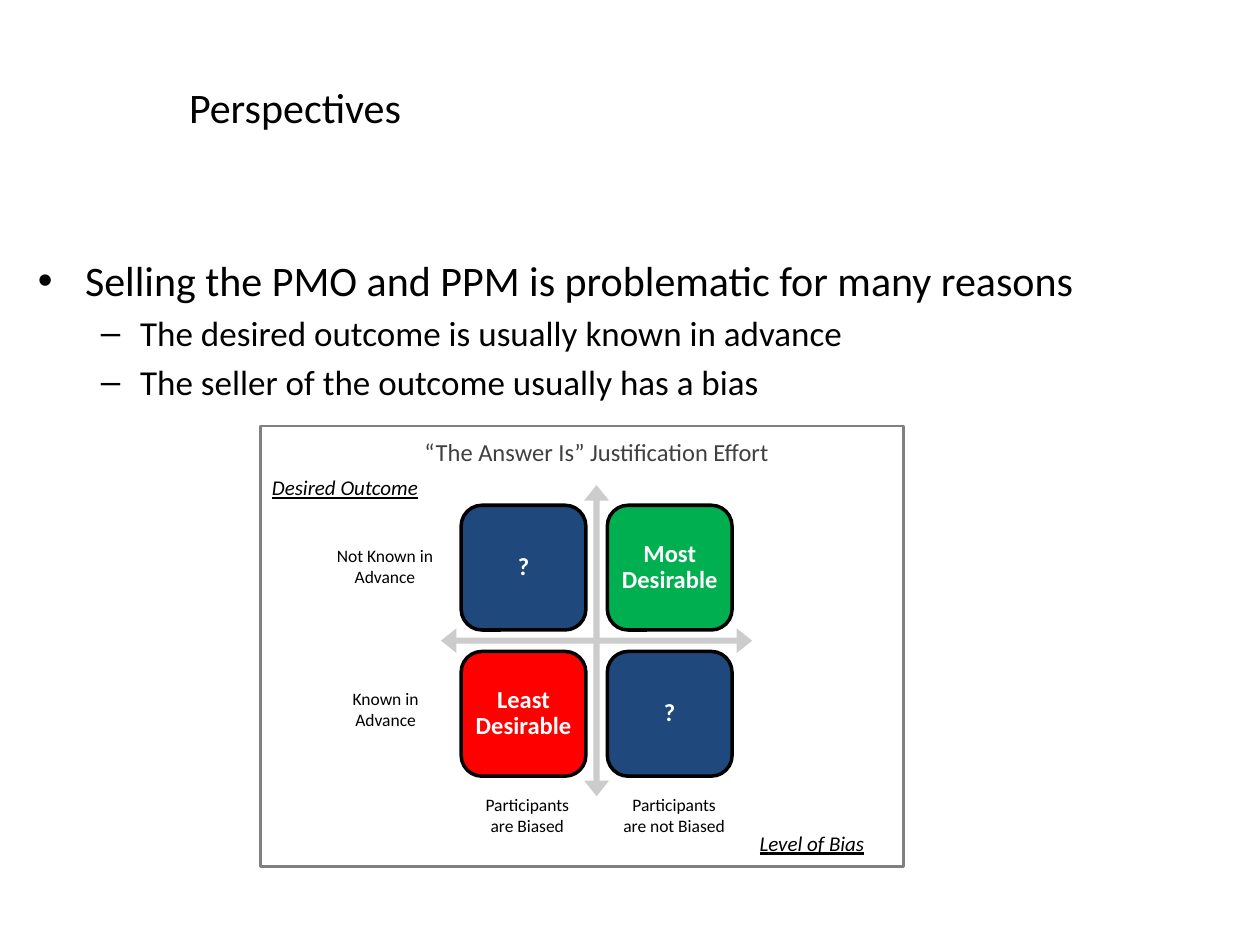
import pptx
import pptx.util
import pptx.dml.color
import pptx.enum.shapes
import pptx.enum.text

Inches = pptx.util.Inches
Pt = pptx.util.Pt
RGBColor = pptx.dml.color.RGBColor
Kind = pptx.enum.shapes.MSO_SHAPE
Align = pptx.enum.text.PP_ALIGN
Anchor = pptx.enum.text.MSO_ANCHOR
Fit = pptx.enum.text.MSO_AUTO_SIZE

BLACK = RGBColor(0x00, 0x00, 0x00)
WHITE = RGBColor(0xFF, 0xFF, 0xFF)
DARK = RGBColor(0x40, 0x40, 0x40)
GRAY = RGBColor(0x80, 0x80, 0x80)
LIGHT = RGBColor(0xCC, 0xCC, 0xCC)
BLUE = RGBColor(0x1F, 0x49, 0x7D)
GREEN = RGBColor(0x00, 0xB0, 0x50)
RED = RGBColor(0xFF, 0x00, 0x00)


def write(frame, text, size=10, color=BLACK, align=None, bold=None,
          slant=None, space=None):
    for i, line in enumerate(text.split("\n")):
        para = frame.paragraphs[0] if i == 0 else frame.add_paragraph()
        para.alignment = align
        para.line_spacing = space
        run = para.add_run()
        run.text = line
        font = run.font
        font.name = "Calibri"
        font.size = Pt(size)
        font.color.rgb = color
        font.bold = bold
        font.italic = slant
        font.underline = slant


def place(shape, box):
    shape.left, shape.top, shape.width, shape.height = map(Inches, box)


def label(slide, box, text, **style):
    frame = slide.shapes.add_textbox(*map(Inches, box)).text_frame
    frame.word_wrap = False
    frame.auto_size = Fit.SHAPE_TO_FIT_TEXT
    write(frame, text, **style)


def figure(slide, kind, box, fill=None, line=None, width=1):
    shape = slide.shapes.add_shape(kind, *map(Inches, box))
    shape.shadow.inherit = False
    if fill is None:
        shape.fill.background()
    else:
        shape.fill.solid()
        shape.fill.fore_color.rgb = fill
    if line is None:
        shape.line.fill.background()
    else:
        shape.line.color.rgb = line
        shape.line.width = Pt(width)
    return shape


def tile(slide, col, row, text, fill):
    box = (3.66 + 1.16 * col, 4.01 + 1.16 * row, 0.99, 0.99)
    shape = figure(slide, Kind.ROUNDED_RECTANGLE, box, fill, BLACK, 2)
    frame = shape.text_frame
    frame.word_wrap = True
    frame.vertical_anchor = Anchor.MIDDLE
    frame.margin_left = frame.margin_right = Inches(0.06)
    frame.margin_top = frame.margin_bottom = Inches(0.06)
    write(frame, text, size=14, color=WHITE, align=Align.CENTER, bold=True,
          space=0.9)


def head(slide):
    title = slide.shapes.title
    place(title, (1.4, 0.4, 8.26, 0.9))
    title.text_frame.vertical_anchor = Anchor.MIDDLE
    write(title.text_frame, "Perspectives", size=24, align=Align.LEFT)


def points(slide):
    body = slide.placeholders[1]
    place(body, (0.2, 1.97, 9.8, 4.49))
    items = [
        (0, 24, "Selling the PMO and PPM is problematic for many reasons"),
        (1, 20, "The desired outcome is usually known in advance"),
        (1, 20, "The seller of the outcome usually has a bias"),
    ]
    frame = body.text_frame
    write(frame, "\n".join(text for _, _, text in items))
    for para, (level, size, _) in zip(frame.paragraphs, items):
        para.level = level
        para.runs[0].font.size = Pt(size)


def matrix(slide):
    figure(slide, Kind.RECTANGLE, (2.07, 3.38, 5.1, 3.5), None, GRAY, 1.5)
    label(slide, (3.15, 3.42, 3.17, 0.34),
          "“The Answer Is” Justification Effort",
          size=14, color=DARK, align=Align.CENTER)
    cross = figure(slide, Kind.QUAD_ARROW, (3.5, 3.85, 2.47, 2.47), LIGHT)
    for i, value in enumerate((0.02, 0.04, 0.05)):
        cross.adjustments[i] = value

    tiles = [("?", BLUE), ("Most Desirable", GREEN),
             ("Least Desirable", RED), ("?", BLUE)]
    for i, (text, fill) in enumerate(tiles):
        tile(slide, i % 2, i // 2, text, fill)

    for box, text in [
        ((2.06, 3.72, 1.51, 0.3), "Desired Outcome"),
        ((5.93, 6.54, 1.16, 0.3), "Level of Bias"),
    ]:
        label(slide, box, text, size=12, slant=True)

    for box, text in [
        ((2.54, 4.28, 1.03, 0.44), "Not Known in\nAdvance"),
        ((2.67, 5.41, 0.78, 0.44), "Known in\nAdvance"),
        ((3.7, 6.25, 0.97, 0.44), "Participants\nare Biased"),
        ((4.8, 6.25, 1.1, 0.44), "Participants\nare not Biased"),
    ]:
        label(slide, box, text, align=Align.CENTER)


def main():
    deck = pptx.Presentation()
    deck.slide_width = Inches(10)
    deck.slide_height = Inches(7.5)
    slide = deck.slides.add_slide(deck.slide_layouts[1])
    head(slide)
    points(slide)
    matrix(slide)
    deck.save("out.pptx")


if __name__ == "__main__":
    main()
